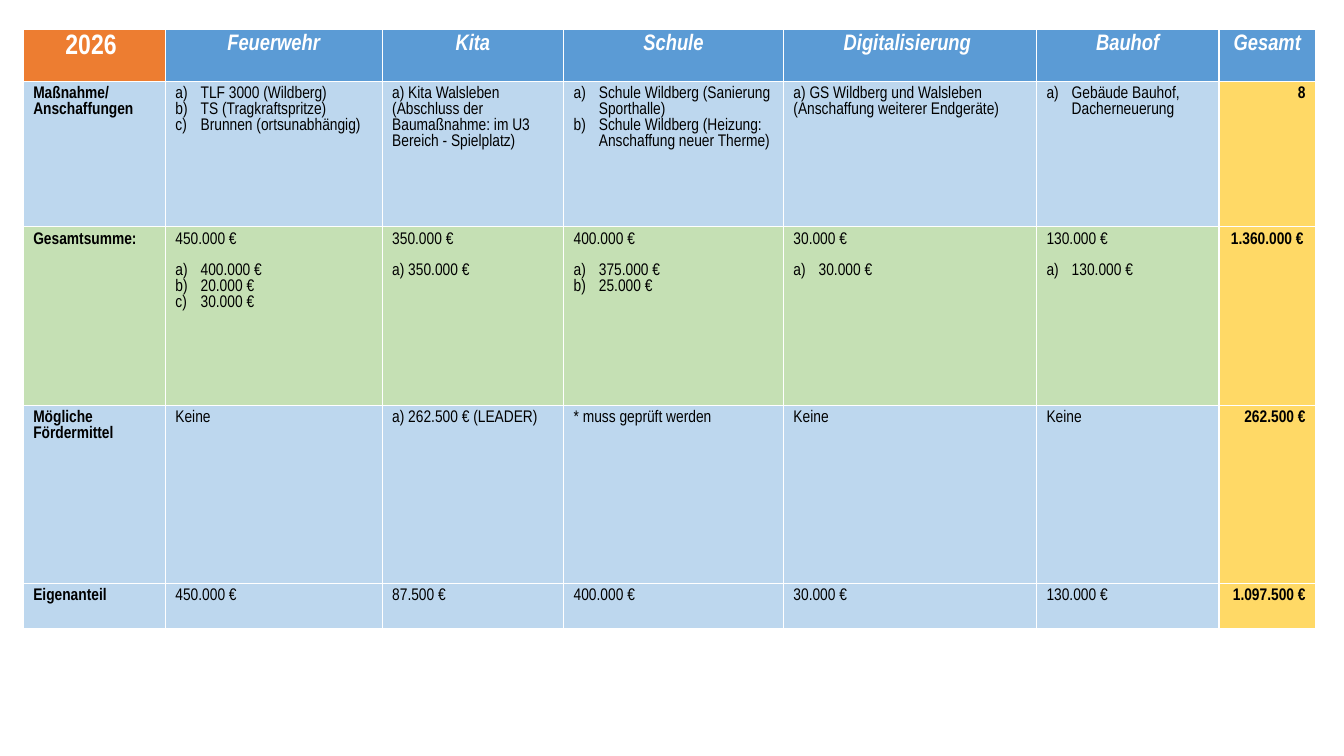
import lxml.etree
import pptx
import pptx.dml.color
import pptx.enum.text
import pptx.oxml.ns
import pptx.util

Inches = pptx.util.Inches
Pt = pptx.util.Pt
RGBColor = pptx.dml.color.RGBColor
ALIGN = pptx.enum.text.PP_ALIGN

WHITE = RGBColor(0xFF, 0xFF, 0xFF)
BLACK = RGBColor(0x00, 0x00, 0x00)
ORANGE = RGBColor(0xED, 0x7D, 0x31)
BLUE = RGBColor(0x5B, 0x9B, 0xD5)
LIGHT_BLUE = RGBColor(0xBD, 0xD7, 0xEE)
LIGHT_GREEN = RGBColor(0xC5, 0xE0, 0xB4)
YELLOW = RGBColor(0xFF, 0xD9, 0x66)

FONT = "Arial Narrow"
NUMBER_INDENT = Inches(0.25)
BLOCK_GAP = Pt(11.4)

COLUMN_WIDTHS = [1.41, 2.15, 1.8, 2.18, 2.51, 1.81, 0.96]
ROW_HEIGHTS = [0.52, 1.44, 1.77, 1.77, 0.45]
TABLE_BOX = (0.23, 0.29, sum(COLUMN_WIDTHS), sum(ROW_HEIGHTS))

YEAR = "2026 "
HEADINGS = ["Feuerwehr", "Kita", "Schule", "Digitalisierung ", "Bauhof", "Gesamt"]

# Each cell is a tuple of blocks: a string is plain text, a list is lettered a), b), c).
BUDGET_ROWS = [
    (LIGHT_BLUE, "Maßnahme/ Anschaffungen", [
        (["TLF 3000 (Wildberg)", "TS (Tragkraftspritze)", "Brunnen (ortsunabhängig)"],),
        ("a) Kita Walsleben (Abschluss der Baumaßnahme: im U3 Bereich - Spielplatz)",),
        (["Schule Wildberg (Sanierung Sporthalle)",
          "Schule Wildberg (Heizung: Anschaffung neuer Therme)"],),
        ("a) GS Wildberg und Walsleben\n(Anschaffung weiterer Endgeräte)",),
        (["Gebäude Bauhof, Dacherneuerung"],),
    ], "8", ALIGN.RIGHT),
    (LIGHT_GREEN, "Gesamtsumme:", [
        ("450.000 €", ["400.000 €", "20.000 €", "30.000 €"]),
        ("350.000 €", "a) 350.000 €"),
        ("400.000 €", ["375.000 €", "25.000 €"]),
        ("30.000 €", ["30.000 €"]),
        ("130.000 €", ["130.000 €"]),
    ], "1.360.000 €", ALIGN.CENTER),
    (LIGHT_BLUE, "Mögliche Fördermittel", [
        ("Keine",), ("a) 262.500 € (LEADER)",), ("* muss geprüft werden",),
        ("Keine",), ("Keine",),
    ], "262.500 €", ALIGN.RIGHT),
    (LIGHT_BLUE, "Eigenanteil", [
        ("450.000 €",), ("87.500 €",), ("400.000 €",), ("30.000 €",), ("130.000 €",),
    ], "1.097.500 €", ALIGN.RIGHT),
]


def write_text(para, text, size=12, color=BLACK, bold=False, italic=False,
               align=ALIGN.LEFT, lettered=False, gap=None):
    if lettered:
        properties = para._p.get_or_add_pPr()
        properties.set("marL", str(NUMBER_INDENT))
        properties.set("indent", str(-NUMBER_INDENT))
        numbering = lxml.etree.SubElement(properties, pptx.oxml.ns.qn("a:buAutoNum"))
        numbering.set("type", "alphaLcParenR")
    para.alignment = align
    if gap is not None:
        para.space_before = gap
    span = para.add_run()
    span.text = text
    span.font.name = FONT
    span.font.size = Pt(size)
    span.font.bold = bold
    span.font.italic = italic
    span.font.color.rgb = color


def fill_cell(cell, blocks, fill, **text_format):
    """Write the blocks below each other, with a gap between two blocks."""
    cell.fill.solid()
    cell.fill.fore_color.rgb = fill
    frame = cell.text_frame
    para = frame.paragraphs[0]
    for block_index, block in enumerate(blocks):
        lettered = isinstance(block, list)
        lines = block if lettered else block.split("\n")
        for line_index, line in enumerate(lines):
            if block_index or line_index:
                para = frame.add_paragraph()
            gap = BLOCK_GAP if block_index and not line_index else None
            write_text(para, line, lettered=lettered, gap=gap, **text_format)


def fill_header_row(table):
    heading_format = {"color": WHITE, "bold": True, "align": ALIGN.CENTER}
    fill_cell(table.cell(0, 0), (YEAR,), ORANGE, size=20, **heading_format)
    for column, heading in enumerate(HEADINGS, start=1):
        fill_cell(table.cell(0, column), (heading,), BLUE, size=16, italic=True,
                  **heading_format)


def fill_budget_row(table, row, fill, label, entries, total, total_align):
    fill_cell(table.cell(row, 0), (label,), fill, bold=True)
    for column, blocks in enumerate(entries, start=1):
        fill_cell(table.cell(row, column), blocks, fill)
    fill_cell(table.cell(row, len(entries) + 1), (total,), YELLOW, bold=True,
              align=total_align)


def add_budget_table(page, box):
    left, top, width, height = map(Inches, box)
    table = page.shapes.add_table(len(ROW_HEIGHTS), len(COLUMN_WIDTHS),
                                  left, top, width, height).table
    table.horz_banding = False
    for column, column_width in zip(table.columns, COLUMN_WIDTHS):
        column.width = Inches(column_width)
    for row, row_height in zip(table.rows, ROW_HEIGHTS):
        row.height = Inches(row_height)
    fill_header_row(table)
    for row, budget in enumerate(BUDGET_ROWS, start=1):
        fill_budget_row(table, row, *budget)


def main():
    deck = pptx.Presentation()
    deck.slide_width = Inches(13.33)
    deck.slide_height = Inches(7.5)
    page = deck.slides.add_slide(deck.slide_layouts[6])
    add_budget_table(page, TABLE_BOX)
    deck.save("out.pptx")


if __name__ == "__main__":
    main()
